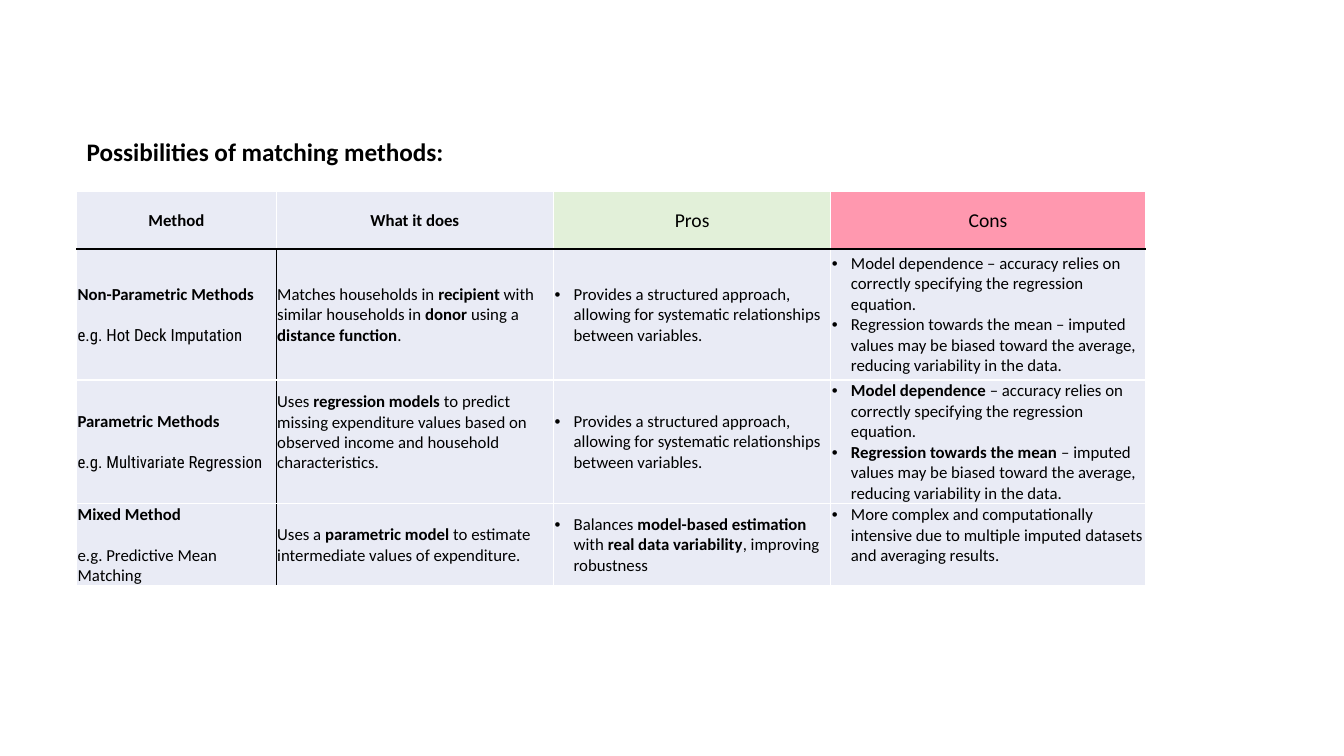
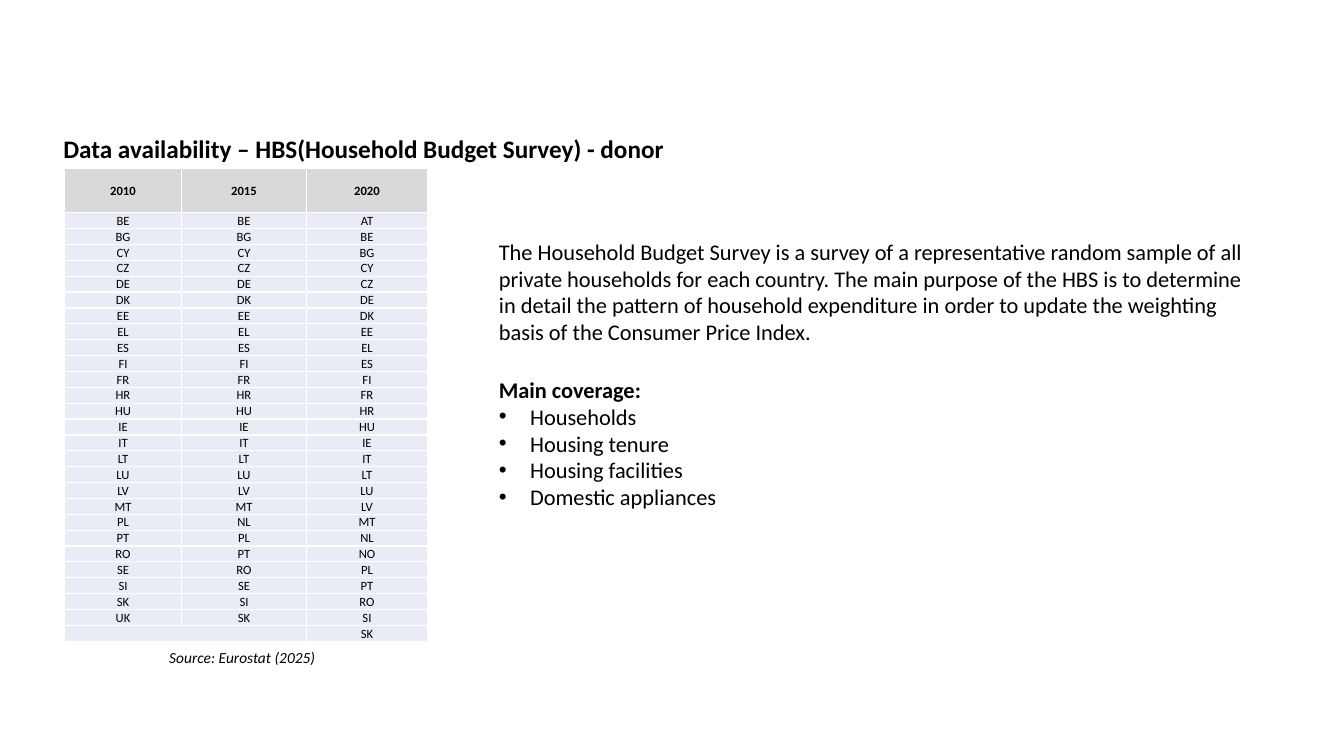
import pptx
import pptx.dml.color
import pptx.enum.text
import pptx.util
from lxml import etree
from pptx.oxml.ns import qn
from pptx.util import Inches

FACE = "Calibri"
BLACK, WHITE, PALE, GREY = "000000", "FFFFFF", "E9EBF5", "D9D9D9"
GREEN, PINK = "E2F0D9", "FF98AF"
ALIGN = pptx.enum.text.PP_ALIGN
MIDDLE = pptx.enum.text.MSO_ANCHOR.MIDDLE
FIT = pptx.enum.text.MSO_AUTO_SIZE.SHAPE_TO_FIT_TEXT


def color(code):
    return pptx.dml.color.RGBColor.from_string(code)


def write(frame, text, size, align=ALIGN.LEFT, hang=0.19):
    """One paragraph per line; **bold** spans; a leading bullet makes a list item."""
    for i, line in enumerate(text.split("\n")):
        para = frame.paragraphs[0] if i == 0 else frame.add_paragraph()
        para.alignment = align
        if line.startswith("• "):
            line = line[2:]
            props = para._p.get_or_add_pPr()
            props.set("marL", str(Inches(hang)))
            props.set("indent", str(-Inches(hang)))
            etree.SubElement(props, qn("a:buFont")).set("typeface", "Arial")
            etree.SubElement(props, qn("a:buChar")).set("char", "•")
        for j, part in enumerate(line.split("**")):
            if part:
                run = para.add_run()
                run.text = part
                run.font.name = FACE
                run.font.size = pptx.util.Pt(size)
                run.font.bold = j % 2 == 1
                run.font.color.rgb = color(BLACK)
        if not line:
            end = etree.SubElement(para._p, qn("a:endParaRPr"))
            end.set("sz", str(size * 100))


deck = pptx.Presentation()
deck.slide_width, deck.slide_height = Inches(13.33), Inches(7.5)
pages = [deck.slides.add_slide(deck.slide_layouts[6]) for _ in range(2)]

# Table contents
pro = "• Provides a structured approach, allowing for systematic relationships between variables."
con = ("• {0}Model dependence{0} – accuracy relies on correctly specifying the regression equation.\n"
       "• {0}Regression towards the mean{0} – imputed values may be biased toward the average, "
       "reducing variability in the data.")
methods = [
    ["**Method**", "**What it does**", "Pros", "Cons"],
    ["**Non-Parametric Methods**\ne.g. Hot Deck Imputation",
     "Matches households in **recipient** with similar households in **donor** "
     "using a **distance function**.",
     pro, con.format("")],
    ["**Parametric Methods**\ne.g. Multivariate Regression",
     "Uses **regression models** to predict missing expenditure values based on "
     "observed income and household characteristics.",
     pro, con.format("**")],
    ["**Mixed Method**\ne.g. Predictive Mean Matching",
     "Uses a **parametric model** to estimate intermediate values of expenditure.",
     "• Balances **model-based estimation** with **real data variability**, improving robustness",
     "• More complex and computationally intensive due to multiple imputed datasets "
     "and averaging results."],
]
years = [
    "**2010** BE BG CY CZ DE DK EE EL ES FI FR HR HU IE IT LT LU LV MT PL PT RO SE SI SK UK".split() + [""],
    "**2015** BE BG CY CZ DE DK EE EL ES FI FR HR HU IE IT LT LU LV MT NL PL PT RO SE SI SK".split() + [""],
    "**2020** AT BE BG CY CZ DE DK EE EL ES FI FR HR HU IE IT LT LU LV MT NL NO PL PT RO SI SK".split(),
]
lands = list(zip(*years))

# Tables: page, rows of text, left, top, widths, heights, header fills, size, body alignment
plans = [
    (pages[0], methods, 0.76, 1.9, [1.98, 2.75, 2.75, 3.12], [0.57, 1.3, 1.21, 0.81],
     [PALE, PALE, GREEN, PINK], 12, ALIGN.LEFT),
    (pages[1], lands, 0.64, 1.67, [1.16, 1.24, 1.2], [0.44] + [0.15] * 27,
     [GREY] * 3, 9, ALIGN.CENTER),
]
grids = []
for page, rows, left, top, wide, high, heads, size, align in plans:
    grid = page.shapes.add_table(len(rows), len(wide), Inches(left), Inches(top),
                                 Inches(sum(wide)), Inches(sum(high))).table
    grids.append(grid)
    grid.first_row = grid.horz_banding = False
    for col, width in zip(grid.columns, wide):
        col.width = Inches(width)
    for row, height in zip(grid.rows, high):
        row.height = Inches(height)
    for r, row in enumerate(rows):
        for c, text in enumerate(row):
            cell = grid.cell(r, c)
            cell.vertical_anchor = MIDDLE
            cell.margin_left = cell.margin_right = Inches(0.01)
            cell.margin_top, cell.margin_bottom = pptx.util.Pt(0.5), 0

            # Black rules under the header and beside the method names
            dark = set()
            if rows is methods:
                dark = {(0, "B"), (1, "T")} & {(r, "B"), (r, "T")}
                dark = {side for _, side in dark}
                if r > 0 and c < 2:
                    dark.add("RL"[c])
            for side in "LRTB":
                edge = etree.SubElement(cell._tc.get_or_add_tcPr(), qn("a:ln" + side))
                edge.set("w", str(pptx.util.Pt(1)))
                paint = etree.SubElement(edge, qn("a:solidFill"))
                tone = etree.SubElement(paint, qn("a:srgbClr"))
                tone.set("val", BLACK if side in dark else WHITE)
            cell.fill.solid()
            cell.fill.fore_color.rgb = color(heads[c] if r == 0 else PALE)

            big = 14 if text in ("Pros", "Cons") else size
            write(cell.text_frame, text, big, align if r else ALIGN.CENTER)

# Method names: gap before the example, condensed face in two rows
for r in range(1, 4):
    sample = grids[0].cell(r, 0).text_frame.paragraphs[1]
    sample.space_before = pptx.util.Pt(14.5)
    if r < 3:
        sample.runs[0].font.name = "Roboto Condensed"

# Two cells sit a little above the middle
for r, c in [(2, 1), (3, 3)]:
    grids[0].cell(r, c).margin_bottom = Inches(0.19)
grids[1].cell(27, 0).merge(grids[1].cell(27, 1))

# Titles, body and source
body = ("The Household Budget Survey is a survey of a representative random sample of all "
        "private households for each country. The main purpose of the HBS is to determine "
        "in detail the pattern of household expenditure in order to update the weighting "
        "basis of the Consumer Price Index.\n**Main coverage:**\n• Households\n"
        "• Housing tenure\n• Housing facilities\n• Domestic appliances")
notes = [
    (pages[0], 0.76, 1.3, 8.79, 0.4, "**Possibilities of matching methods:**", 18),
    (pages[1], 0.53, 1.27, 12.63, 0.4,
     "**Data availability – HBS(Household Budget Survey) - donor**", 18),
    (pages[1], 4.85, 2.31, 7.7, 2.86, body, 16),
    (pages[1], 1.58, 6.38, 2.42, 0.29, "Source: Eurostat (2025)", 11),
]
for page, left, top, width, height, text, size in notes:
    box = page.shapes.add_textbox(Inches(left), Inches(top), Inches(width), Inches(height))
    frame = box.text_frame
    frame.word_wrap = True
    frame.auto_size = FIT
    write(frame, text, size, hang=0.31)
    if text is body:
        frame.paragraphs[1].space_before = pptx.util.Pt(22)
    elif size == 11:
        frame.paragraphs[0].runs[0].font.italic = True

deck.save("out.pptx")
